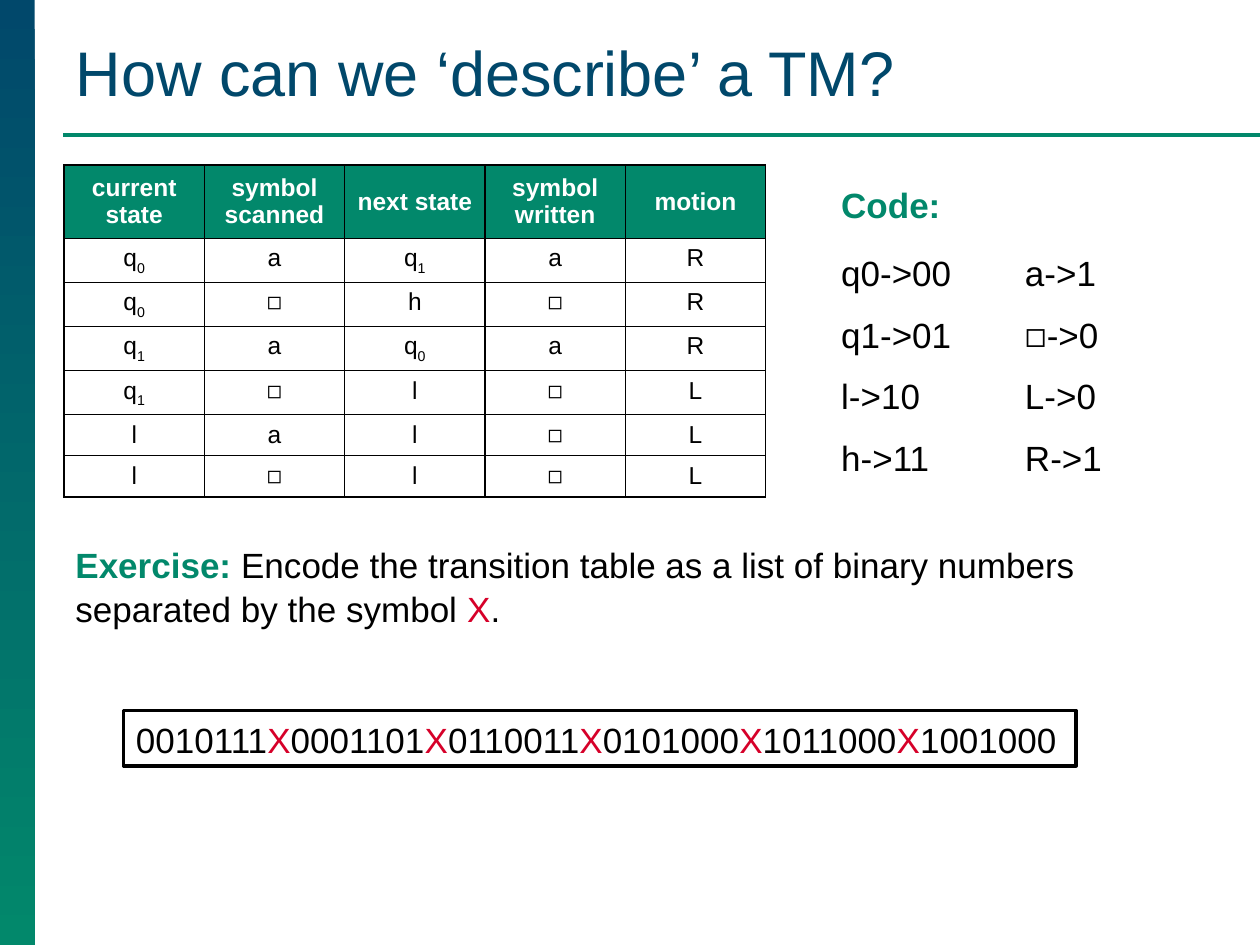
"""Build the slide on describing a Turing machine by encoding its transition table."""
from dataclasses import dataclass

from lxml.etree import SubElement
from pptx import Presentation
from pptx.dml.color import RGBColor
from pptx.enum.shapes import MSO_CONNECTOR, MSO_SHAPE
from pptx.enum.text import MSO_ANCHOR, MSO_AUTO_SIZE, PP_ALIGN
from pptx.oxml.ns import qn
from pptx.util import Pt


@dataclass(frozen=True)
class Theme:
    font: str = "Arial"
    title_size: int = 36
    body_size: int = 20
    table_size: int = 14
    line_spacing: float = 1.05
    space_before: int = 10
    navy: RGBColor = RGBColor(0x01, 0x48, 0x6B)
    green: RGBColor = RGBColor(0x02, 0x88, 0x6B)
    red: RGBColor = RGBColor(0xD6, 0x00, 0x29)
    black: RGBColor = RGBColor(0, 0, 0)
    white: RGBColor = RGBColor(255, 255, 255)


THEME = Theme()
HEADERS = ["current state", "symbol scanned", "next state", "symbol written", "motion"]
TRANSITIONS = [
    ["q0", "a", "q1", "a", "R"],
    ["q0", "◻", "h", "◻", "R"],
    ["q1", "a", "q0", "a", "R"],
    ["q1", "◻", "l", "◻", "L"],
    ["l", "a", "l", "◻", "L"],
    ["l", "◻", "l", "◻", "L"],
]
ROW_HEIGHTS = [42] + [25] * 4 + [23.5] * 2
COLUMN_WIDTH = 80.2
STATE_CODES = ["q0->00", "q1->01", "l->10", "h->11"]
SYMBOL_CODES = ["a->1", "◻->0", "L->0", "R->1"]
ENCODING = ["0010111", "0001101", "0110011", "0101000", "1011000", "1001000"]


def format_paragraph(paragraph, size, color, bold=False):
    """Give a paragraph its font, size, colour and weight."""
    font = paragraph.font
    font.name = THEME.font
    font.size = Pt(size)
    font.color.rgb = color
    font.bold = bold


def fill_paragraph(paragraph, pieces):
    """Write (text, colour, bold) pieces as the runs of a body paragraph."""
    paragraph.line_spacing = THEME.line_spacing
    paragraph.alignment = PP_ALIGN.LEFT
    format_paragraph(paragraph, THEME.body_size, THEME.black)
    for text, color, bold in pieces:
        run = paragraph.add_run()
        run.text = text
        run.font.color.rgb = color
        run.font.bold = bold


def add_text(slide, box, lines, wrap=True):
    """Add a text box with one paragraph for each list of pieces."""
    frame = slide.shapes.add_textbox(*map(Pt, box)).text_frame
    frame.word_wrap = wrap
    for index, pieces in enumerate(lines):
        paragraph = frame.add_paragraph() if index else frame.paragraphs[0]
        if index:
            paragraph.space_before = Pt(THEME.space_before)
        fill_paragraph(paragraph, pieces)


def add_code_column(slide, box, codes):
    """Add a column of code assignments."""
    add_text(slide, box, [[(code, THEME.black, False)] for code in codes])


def add_title(slide, text):
    """Place and format the title placeholder."""
    title = slide.shapes.title
    title.left, title.top, title.width, title.height = map(Pt, (36, 15, 668, 51))
    frame = title.text_frame
    frame.auto_size = MSO_AUTO_SIZE.NONE
    frame.vertical_anchor = MSO_ANCHOR.BOTTOM
    frame.text = text
    frame.paragraphs[0].alignment = PP_ALIGN.LEFT
    format_paragraph(frame.paragraphs[0], THEME.title_size, THEME.navy)


def add_sidebar(slide):
    """Add the gradient band along the left edge."""
    sidebar = slide.shapes.add_shape(MSO_SHAPE.RECTANGLE, 0, 0, Pt(19.8), Pt(540))
    sidebar.shadow.inherit = False
    sidebar.line.fill.background()
    sidebar.fill.gradient()
    sidebar.fill.gradient_angle = 270
    for stop, color in zip(sidebar.fill.gradient_stops, (THEME.navy, THEME.green)):
        stop.color.rgb = color


def add_title_rule(slide):
    """Add the line under the title."""
    ends = map(Pt, (36, 77, 720, 77))
    rule = slide.shapes.add_connector(MSO_CONNECTOR.STRAIGHT, *ends)
    rule.line.color.rgb = THEME.green
    rule.line.width = Pt(2.25)
    SubElement(rule._element.spPr, qn("a:effectLst"))


def set_borders(cell):
    """Draw thin black borders on all sides of a cell."""
    properties = cell._tc.get_or_add_tcPr()
    for position, side in enumerate(("lnL", "lnR", "lnT", "lnB")):
        border = SubElement(properties, qn(f"a:{side}"), w=str(Pt(1)))
        properties.insert(position, border)
        fill = SubElement(border, qn("a:solidFill"))
        SubElement(fill, qn("a:srgbClr"), val=str(THEME.black))


def fill_cell(cell, text, is_header):
    """Write a table cell, lowering the index of a numbered state."""
    cell.fill.solid()
    cell.fill.fore_color.rgb = THEME.green if is_header else THEME.white
    cell.vertical_anchor = MSO_ANCHOR.MIDDLE if is_header else MSO_ANCHOR.TOP
    set_borders(cell)
    paragraph = cell.text_frame.paragraphs[0]
    paragraph.alignment = PP_ALIGN.CENTER
    color = THEME.white if is_header else THEME.black
    format_paragraph(paragraph, THEME.table_size, color, is_header)
    letters = text.rstrip("0123456789")
    paragraph.add_run().text = letters
    if letters != text:
        index = paragraph.add_run()
        index.text = text[len(letters):]
        index._r.get_or_add_rPr().set("baseline", "-25000")


def add_transition_table(slide):
    """Add the transition table of the machine."""
    rows = [HEADERS] + TRANSITIONS
    size = (COLUMN_WIDTH * len(HEADERS), sum(ROW_HEIGHTS))
    box = map(Pt, (36.6, 94.2, *size))
    table = slide.shapes.add_table(len(rows), len(HEADERS), *box).table
    for column in table.columns:
        column.width = Pt(COLUMN_WIDTH)
    for row_index, (texts, height) in enumerate(zip(rows, ROW_HEIGHTS)):
        table.rows[row_index].height = Pt(height)
        for column_index, text in enumerate(texts):
            fill_cell(table.cell(row_index, column_index), text, row_index == 0)


def add_encoding(slide):
    """Add the framed binary encoding with its red separators."""
    frame_box = slide.shapes.add_shape(MSO_SHAPE.RECTANGLE, *map(Pt, (70.6, 406, 544.4, 31.6)))
    frame_box.shadow.inherit = False
    frame_box.fill.solid()
    frame_box.fill.fore_color.rgb = THEME.white
    frame_box.line.color.rgb = THEME.black
    frame_box.line.width = Pt(2)
    frame_box.text_frame.word_wrap = False
    pieces = []
    for number in ENCODING:
        pieces += [(number, THEME.black, False), ("X", THEME.red, False)]
    fill_paragraph(frame_box.text_frame.paragraphs[0], pieces[:-1])


def main():
    """Build and save the slide."""
    presentation = Presentation()
    presentation.slide_width, presentation.slide_height = Pt(720), Pt(540)
    slide = presentation.slides.add_slide(presentation.slide_layouts[5])
    add_sidebar(slide)
    add_title_rule(slide)
    add_title(slide, "How can we ‘describe’ a TM?")
    add_transition_table(slide)
    add_code_column(slide, (473.6, 139, 79.2, 140), STATE_CODES)
    add_code_column(slide, (578.6, 139, 68, 140), SYMBOL_CODES)
    exercise = [
        ("Exercise: ", THEME.green, True),
        ("Encode the transition table as a list of binary numbers "
         "separated by the symbol ", THEME.black, False),
        ("X", THEME.red, False),
        (".", THEME.black, False),
    ]
    add_text(slide, (36, 306, 656.6, 55.4), [exercise])
    add_encoding(slide)
    add_text(slide, (473.6, 100, 72, 31.6), [[("Code:", THEME.green, True)]], wrap=False)
    presentation.save("out.pptx")


if __name__ == "__main__":
    main()
